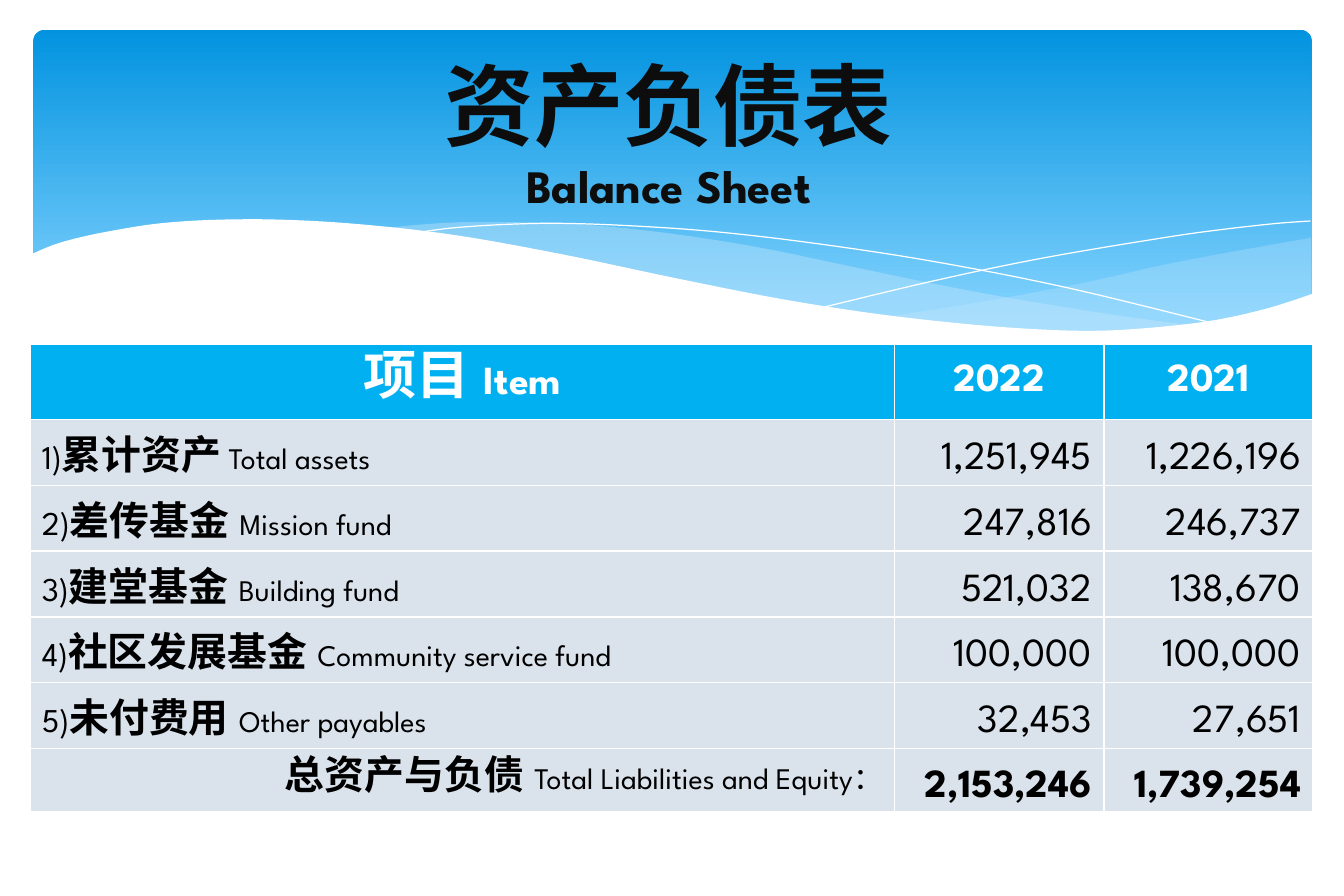
import pptx
import pptx.util
import pptx.dml.color
import pptx.enum.shapes
import pptx.enum.text
import pptx.oxml
import pptx.oxml.ns
import lxml.etree

Pt = pptx.util.Pt
RGB = pptx.dml.color.RGBColor
ALIGN = pptx.enum.text.PP_ALIGN
MID = pptx.enum.text.MSO_ANCHOR.MIDDLE
qn = pptx.oxml.ns.qn

WHITE = RGB(0xFF, 0xFF, 0xFF)
BLACK = RGB(0x00, 0x00, 0x00)
INK = RGB(0x0D, 0x0D, 0x0D)
DEEP = RGB(0x02, 0x93, 0xE0)
SKY = RGB(0x83, 0xD3, 0xFE)
MIST = RGB(0xC6, 0xE7, 0xFC)
HEAD = RGB(0x00, 0xB0, 0xF0)
BODY = RGB(0xDA, 0xE2, 0xEB)

# Knots of the waves, in columns and rows of the grid
BACK_TOP = [(43.9, 7.96), (40.76, 8.52), (38.72, 8.92), (36.24, 9.48),
            (32.8, 10.12), (29.76, 10.6)]
BACK_LOW = [(29.76, 10.6), (32.32, 10.88), (35.12, 11.08), (37.08, 11.08),
            (38.84, 11.04), (40.36, 10.8), (41.76, 10.52), (43.9, 9.88)]
FRONT_TOP = [(40.16, 10.92), (37.68, 10.6), (34.88, 10.16), (31.76, 9.6),
             (28.28, 8.88), (25.6, 8.32), (23.16, 7.92), (20.92, 7.64),
             (18.88, 7.48), (17.08, 7.44), (15.48, 7.44), (14.08, 7.52),
             (12.88, 7.64)]
FRONT_LOW = [(12.88, 7.64), (15.4, 7.96), (18.24, 8.44), (20.24, 8.88),
             (23.84, 9.6), (27.04, 10.2), (29.96, 10.64), (32.52, 10.96),
             (34.76, 11.08), (36.8, 11.12), (38.6, 11.08), (40.16, 10.92)]
FALL = [(13.92, 7.8), (15.08, 7.64), (16.84, 7.52), (18.72, 7.48),
        (21.08, 7.56), (23.96, 7.76), (27.36, 8.16), (31.28, 8.76),
        (35.76, 9.64), (40.84, 10.88)]
RISE = [(27.6, 10.28), (31.28, 9.4), (34.92, 8.64), (38.96, 7.96),
        (40.96, 7.68), (42.76, 7.48), (43.88, 7.4)]
BASE = [(43.96, 9.84), (42.32, 10.36), (40.44, 10.76), (38.24, 11),
        (36.4, 11.08), (34.24, 11), (31.84, 10.8), (29.12, 10.48),
        (26.08, 10), (22.64, 9.32), (18.84, 8.52), (15.28, 7.88),
        (12.16, 7.52), (9.52, 7.36), (7.24, 7.36), (5.36, 7.48),
        (3.8, 7.72), (2.64, 7.96), (1.8, 8.2), (1.04, 8.52)]
FLOOR = [(1.04, 13.16), (43.96, 13.16)]

# Number, Chinese name, English name, 2022, 2021
ITEMS = [
    ("1)", "累计资产", " Total assets", "1,251,945", "1,226,196"),
    ("2)", "差传基金 ", "Mission fund", "247,816", "246,737"),
    ("3)", "建堂基金 ", "Building fund", "521,032", "138,670"),
    ("4)", "社区发展基金 ", "Community service fund", "100,000", "100,000"),
    ("5)", "未付费用 ", "Other payables", "32,453", "27,651"),
]


def smooth(knots, steps=6):
    """Points of a smooth curve that runs through the knots."""
    ends = [knots[0]] + knots + [knots[-1]]
    dots = [knots[0]]
    for a, b, c, d in zip(ends, ends[1:], ends[2:], ends[3:]):
        for n in range(1, steps + 1):
            t = n / steps
            dots.append(tuple(
                (2 * q + (r - p) * t + (2 * p - 5 * q + 4 * r - s) * t ** 2
                 + (3 * q - p - 3 * r + s) * t ** 3) / 2
                for p, q, r, s in zip(a, b, c, d)))
    return dots


class Deck:
    font = "League Spartan"
    cols, rows = 45, 30

    def __init__(self):
        self.prs = pptx.Presentation()
        self.prs.slide_width = pptx.util.Inches(11.25)
        self.prs.slide_height = pptx.util.Inches(7.5)
        self.slide = self.prs.slides.add_slide(self.prs.slide_layouts[5])
        self.shapes = self.slide.shapes

    def x(self, col):
        return round(self.prs.slide_width * col / self.cols)

    def y(self, row):
        return round(self.prs.slide_height * row / self.rows)

    def box(self, col, row, wide, high):
        return self.x(col), self.y(row), self.x(wide), self.y(high)

    def words(self, para, runs, align=ALIGN.LEFT, lead=None):
        """Runs are (text, size, bold, colour)."""
        para.alignment = align
        if lead:
            para.line_spacing = Pt(lead)
        for text, size, bold, color in runs:
            run = para.add_run()
            run.text = text
            font = run.font
            font.name, font.size, font.bold = self.font, Pt(size), bold
            font.color.rgb = color
            props = run._r.get_or_add_rPr()
            props.set("lang", "zh-CN")
            lxml.etree.SubElement(props, qn("a:ea"), typeface=self.font)

    def panel(self, *area):
        shape = self.shapes.add_shape(
            pptx.enum.shapes.MSO_SHAPE.ROUNDED_RECTANGLE, *self.box(*area))
        shape.adjustments[0] = 0.034
        shape.shadow.inherit = False
        shape.line.fill.background()
        shape.fill.gradient()
        shape.fill.gradient_angle = 270
        for stop, color, spot in zip(shape.fill.gradient_stops,
                                     (DEEP, SKY), (0, 0.9)):
            stop.color.rgb, stop.position = color, spot

    def trace(self, dots, close):
        dots = [(self.x(col), self.y(row)) for col, row in dots]
        pen = self.shapes.build_freeform(*dots[0])
        pen.add_line_segments(dots[1:], close=close)
        shape = pen.convert_to_shape()
        shape.shadow.inherit = False
        return shape

    def wave(self, dots, color, solid=100):
        shape = self.trace(dots, True)
        shape.line.fill.background()
        shape.fill.solid()
        shape.fill.fore_color.rgb = color
        if solid < 100:
            tint = shape._element.spPr.find(".//" + qn("a:srgbClr"))
            lxml.etree.SubElement(tint, qn("a:alpha"), val=str(solid * 1000))

    def curve(self, dots):
        shape = self.trace(dots, False)
        shape.fill.background()
        shape.line.color.rgb = WHITE
        shape.line.width = Pt(0)

    def title(self, area, lines):
        title = self.shapes.title
        self.shapes._spTree.append(title._element)  # bring to front
        title.left, title.top, title.width, title.height = self.box(*area)
        frame = title.text_frame
        frame.word_wrap = True
        frame.vertical_anchor = MID
        frame.auto_size = pptx.enum.text.MSO_AUTO_SIZE.SHAPE_TO_FIT_TEXT
        for n, (text, size) in enumerate(lines):
            para = frame.add_paragraph() if n else frame.paragraphs[0]
            self.words(para, [(text, size, True, INK)], ALIGN.CENTER)

    def table(self, col, row, wides, highs):
        grid = self.shapes.add_table(
            len(highs), len(wides),
            *self.box(col, row, sum(wides), sum(highs))).table
        for part, wide in zip(grid.columns, wides):
            part.width = self.x(wide)
        for part, high in zip(grid.rows, highs):
            part.height = self.y(high)
        return grid

    def cell(self, cell, fill, runs, align, lead=None):
        props = cell._tc.get_or_add_tcPr()
        for side in "LRTB":
            edge = lxml.etree.SubElement(props, qn("a:ln" + side), w="12700")
            paint = lxml.etree.SubElement(edge, qn("a:solidFill"))
            lxml.etree.SubElement(paint, qn("a:srgbClr"), val=str(WHITE))
        cell.fill.solid()
        cell.fill.fore_color.rgb = fill
        cell.vertical_anchor = MID
        self.words(cell.text_frame.paragraphs[0], runs, align, lead)


def main():
    deck = Deck()

    # Banner with waves
    deck.panel(1.12, 1, 42.8, 10.8)
    deck.wave(smooth(BACK_TOP) + smooth(BACK_LOW), MIST, 29)
    deck.wave(smooth(FRONT_TOP) + smooth(FRONT_LOW), MIST, 40)
    deck.curve(smooth(FALL))
    deck.curve(smooth(RISE))
    deck.wave(smooth(BASE) + FLOOR, WHITE)

    # Title
    deck.title((3.8, 1.44, 37.16, 5.92),
               [("资产负债表", 54), ("Balance Sheet", 28)])

    # Table head
    grid = deck.table(1, 11.52, [28.96, 7, 7], [2.52] + [2.2] * 5 + [2.12])
    heads = [[("项目 ", 32, True, WHITE), ("Item", 24, True, WHITE)]]
    heads += [[(year, 24, True, WHITE)] for year in ("2022", "2021")]
    for n, runs in enumerate(heads):
        deck.cell(grid.cell(0, n), HEAD, runs, ALIGN.CENTER)

    # Items and total
    total = ("", "总资产与负债 ", "Total Liabilities and Equity：",
             "2,153,246", "1,739,254")
    for row, (mark, name, gloss, *sums) in enumerate(ITEMS + [total], 1):
        last = not mark
        runs = [(mark, 20, False, BLACK)] if mark else []
        runs += [(name, 24, True, BLACK), (gloss, 18, False, BLACK)]
        deck.cell(grid.cell(row, 0), BODY, runs,
                  ALIGN.RIGHT if last else ALIGN.LEFT, None if last else 31)
        for col, value in enumerate(sums, 1):
            deck.cell(grid.cell(row, col), BODY,
                      [(value, 24, last, BLACK)], ALIGN.RIGHT, 31)

    deck.prs.save("out.pptx")


if __name__ == "__main__":
    main()
